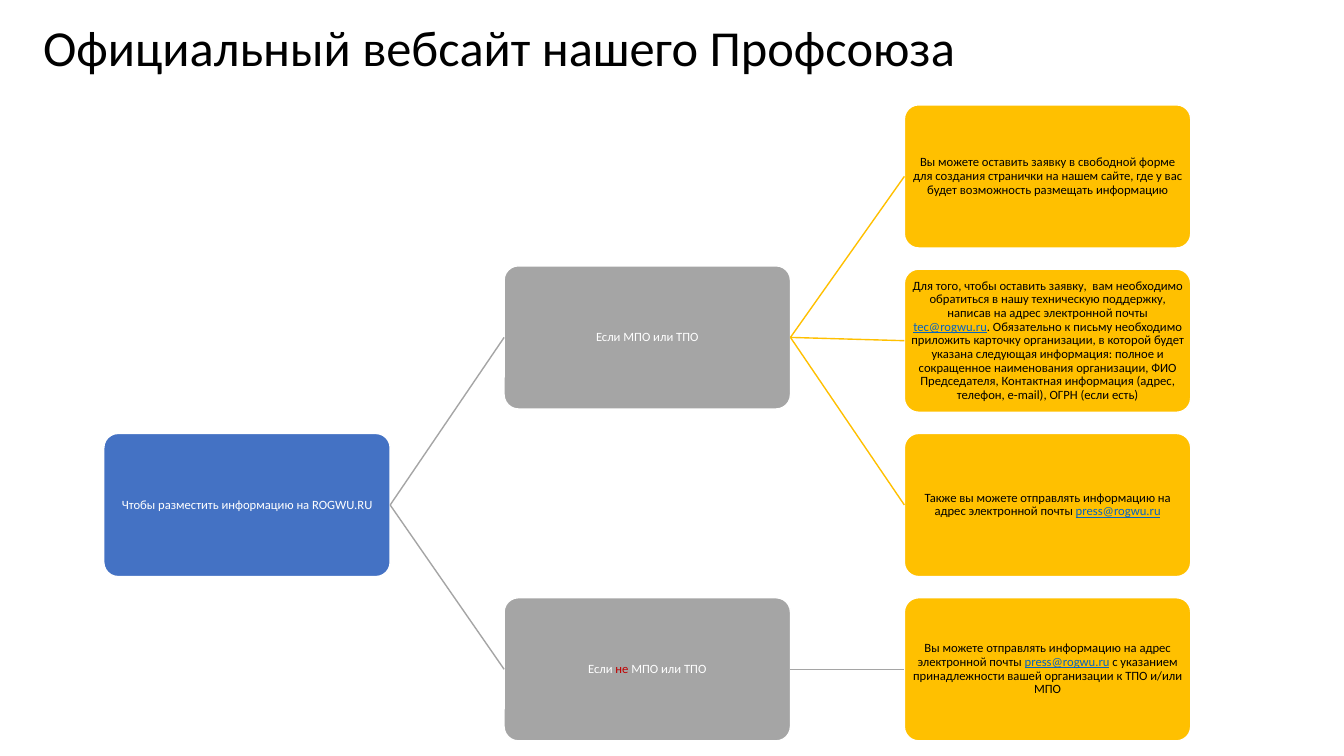
from lxml import etree
from pptx import Presentation
from pptx.dml.color import RGBColor
from pptx.enum.shapes import MSO_CONNECTOR, MSO_SHAPE
from pptx.enum.text import MSO_ANCHOR, PP_ALIGN
from pptx.oxml.ns import qn
from pptx.util import Inches, Pt

ROUND = MSO_SHAPE.ROUNDED_RECTANGLE
LINE = MSO_CONNECTOR.STRAIGHT
MIDDLE = MSO_ANCHOR.MIDDLE
CENTER = PP_ALIGN.CENTER

WHITE = RGBColor(0xFF, 0xFF, 0xFF)
BLACK = RGBColor(0, 0, 0)
BLUE = RGBColor(0x44, 0x72, 0xC4)
GRAY = RGBColor(0xA5, 0xA5, 0xA5)
GOLD = RGBColor(0xFF, 0xC0, 0x00)
RED = RGBColor(0xC0, 0x00, 0x00)
LINK = RGBColor(0x05, 0x63, 0xC1)

# Grid of the tree, in inches
LEFT, TOP = 1.03, 1.04
COL, ROW = 3.97, 1.63
WIDE, HIGH = 2.84, 1.42

# Fill and text colour of each column
LOOKS = [(BLUE, WHITE), (GRAY, WHITE), (GOLD, BLACK)]

# Name: column, row, runs of text; a run with a colour of its own is a pair
NODES = {
    "root": (0, 2, ["Чтобы разместить информацию на ROGWU.RU"]),
    "member": (1, 0.98, ["Если МПО или ТПО"]),
    "other": (1, 3, ["Если ", ("не", RED), " МПО или ТПО"]),
    "page": (2, 0, [
        "Вы можете оставить заявку в свободной форме для создания странички "
        "на нашем сайте, где у вас будет возможность размещать информацию"]),
    "request": (2, 1, [
        "Для того, чтобы оставить заявку,  вам необходимо обратиться в нашу "
        "техническую поддержку, написав на адрес электронной почты ",
        ("tec@rogwu.ru", LINK),
        ". Обязательно к письму необходимо приложить карточку организации, "
        "в которой будет указана следующая информация: полное и сокращенное "
        "наименования организации, ФИО Председателя, Контактная информация "
        "(адрес, телефон, e-mail), ОГРН (если есть)"]),
    "mail": (2, 2, [
        "Также вы можете отправлять информацию на адрес электронной почты ",
        ("press@rogwu.ru", LINK)]),
    "press": (2, 3, [
        "Вы можете отправлять информацию на адрес электронной почты ",
        ("press@rogwu.ru", LINK),
        " с указанием принадлежности вашей организации к ТПО и/или МПО"]),
}

# From, to, colour, width in points
LINKS = [
    ("root", "member", GRAY, 1),
    ("root", "other", GRAY, 1),
    ("member", "page", GOLD, 1),
    ("member", "request", GOLD, 1),
    ("member", "mail", GOLD, 1),
    ("other", "press", GRAY, 0.5),
]


def add_run(para, text, size, color):
    run = para.add_run()
    run.text = text
    run.font.name = "Calibri"
    run.font.size = Pt(size)
    run.font.color.rgb = color
    return run


deck = Presentation()
deck.slide_width = Inches(13.33)
deck.slide_height = Inches(7.5)
slide = deck.slides.add_slide(deck.slide_layouts[6])
shapes = slide.shapes

# Title
title = shapes.add_textbox(Inches(0.33), Inches(-0.23), Inches(11.5), Inches(1.45))
frame = title.text_frame
frame.word_wrap = True
frame.vertical_anchor = MIDDLE
para = frame.paragraphs[0]
para.line_spacing = 0.9
para.space_after = Pt(6)
add_run(para, "Официальный вебсайт нашего Профсоюза", 36, BLACK)

# Boxes
boxes = {}
for name, (col, row, runs) in NODES.items():
    fill, ink = LOOKS[col]
    box = shapes.add_shape(ROUND, Inches(LEFT + col * COL), Inches(TOP + row * ROW),
                           Inches(WIDE), Inches(HIGH))
    box.adjustments[0] = 0.1
    box.shadow.inherit = False
    box.fill.solid()
    box.fill.fore_color.rgb = fill
    box.line.color.rgb = WHITE
    box.line.width = Pt(1)
    frame = box.text_frame
    frame.word_wrap = True
    frame.vertical_anchor = MIDDLE
    for side in ("left", "top", "right", "bottom"):
        setattr(frame, f"margin_{side}", Inches(0.01))
    para = frame.paragraphs[0]
    para.alignment = CENTER
    para.line_spacing = 0.9
    para.space_after = Pt(3)
    for part in runs:
        text, color = (part, ink) if isinstance(part, str) else part
        run = add_run(para, text, 9, color)
        if color == LINK:
            run.font.underline = True
    boxes[name] = box

# Branches
for start, end, color, width in LINKS:
    branch = shapes.add_connector(LINE, 0, 0, 0, 0)
    branch.begin_connect(boxes[start], 3)
    branch.end_connect(boxes[end], 1)
    branch.line.color.rgb = color
    branch.line.width = Pt(width)
    etree.SubElement(branch._element.spPr, qn("a:effectLst"))

deck.save("out.pptx")
